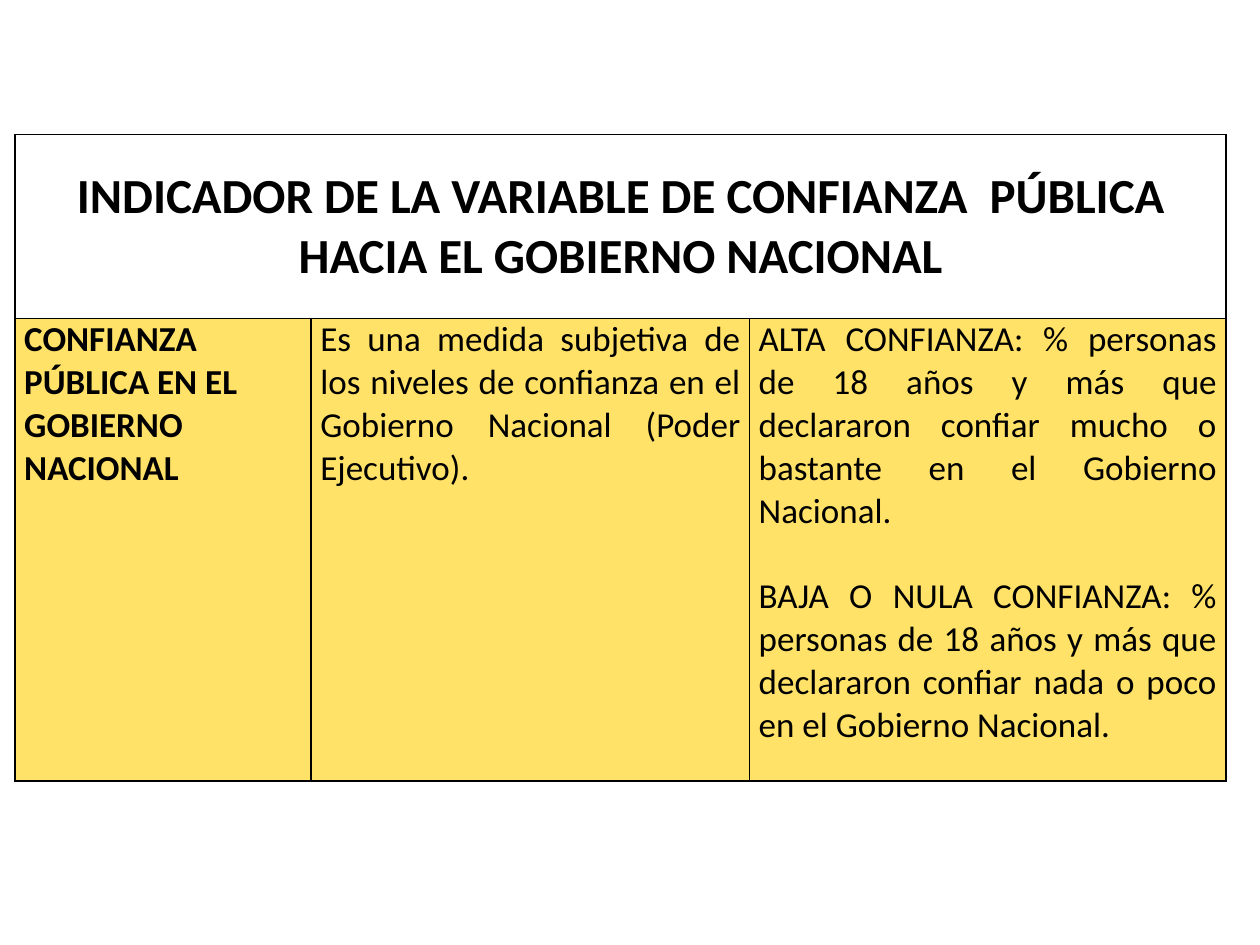
from lxml.etree import SubElement
from pptx import Presentation
from pptx.dml.color import RGBColor
from pptx.enum.text import MSO_ANCHOR as Anchor, PP_ALIGN as Align
from pptx.oxml.ns import qn
from pptx.util import Pt

COLORS = {"text": "000000", "border": "000000", "heading": "FFFFFF", "body": "FFE267"}
HEADING = "INDICADOR DE LA VARIABLE DE CONFIANZA  PÚBLICA HACIA EL GOBIERNO NACIONAL"
VARIABLE = ["CONFIANZA PÚBLICA EN EL GOBIERNO NACIONAL"]
DEFINITION = [
    "Es una medida subjetiva de los niveles de confianza en el Gobierno Nacional (Poder Ejecutivo).",
]
INDICATORS = [
    "ALTA CONFIANZA: % personas de 18 años y más que declararon confiar mucho o bastante "
    "en el Gobierno Nacional.",
    "BAJA O NULA CONFIANZA: % personas de 18 años y más que declararon confiar nada o poco "
    "en el Gobierno Nacional.",
]
BODY = [
    (VARIABLE, {"bold": True}),
    (DEFINITION, {"align": Align.JUSTIFY}),
    (INDICATORS, {"align": Align.JUSTIFY}),
]
LEFT, TOP = 8.64, 77
COLUMN_WIDTHS = [169.2, 250.5, 272.2]
ROW_HEIGHTS = [105, 264.3]
PARAGRAPH_GAP = 24.4


def add_borders(cell):
    properties = cell._tc.get_or_add_tcPr()
    for position, side in enumerate(("a:lnL", "a:lnR", "a:lnT", "a:lnB")):
        line = SubElement(properties, qn(side), w=str(Pt(1)))
        fill = SubElement(line, qn("a:solidFill"))
        SubElement(fill, qn("a:srgbClr"), val=COLORS["border"])
        properties.insert(position, line)  # borders must precede the fill


def fill_cell(cell, texts, fill="body", size=20, bold=False, align=Align.LEFT, anchor=Anchor.TOP):
    cell.fill.solid()
    cell.fill.fore_color.rgb = RGBColor.from_string(COLORS[fill])
    cell.margin_left = cell.margin_right = Pt(5.2)
    cell.margin_top = cell.margin_bottom = 0
    cell.vertical_anchor = anchor
    frame = cell.text_frame
    for index, text in enumerate(texts):
        paragraph = frame.add_paragraph() if index else frame.paragraphs[0]
        paragraph.alignment = align
        paragraph.space_before = Pt(PARAGRAPH_GAP if index else 0)
        run = paragraph.add_run()
        run.text = text
        run.font.name = "Calibri"
        run.font.size = Pt(size)
        run.font.bold = bold
        run.font.color.rgb = RGBColor.from_string(COLORS["text"])


def main():
    presentation = Presentation()
    presentation.slide_width, presentation.slide_height = Pt(720), Pt(540)
    slide = presentation.slides.add_slide(presentation.slide_layouts[6])
    table = slide.shapes.add_table(
        len(ROW_HEIGHTS), len(COLUMN_WIDTHS), Pt(LEFT), Pt(TOP),
        Pt(sum(COLUMN_WIDTHS)), Pt(sum(ROW_HEIGHTS)),
    ).table
    table.first_row = table.horz_banding = False
    for column, width in zip(table.columns, COLUMN_WIDTHS):
        column.width = Pt(width)
    for row, height in zip(table.rows, ROW_HEIGHTS):
        row.height = Pt(height)

    heading = table.cell(0, 0)
    heading.merge(table.cell(0, len(COLUMN_WIDTHS) - 1))
    fill_cell(heading, [HEADING], fill="heading", size=28, bold=True,
              align=Align.CENTER, anchor=Anchor.MIDDLE)
    for column, (texts, text_format) in enumerate(BODY):
        fill_cell(table.cell(1, column), texts, **text_format)
    for cell in table.iter_cells():
        add_borders(cell)
    presentation.save("out.pptx")


if __name__ == "__main__":
    main()
